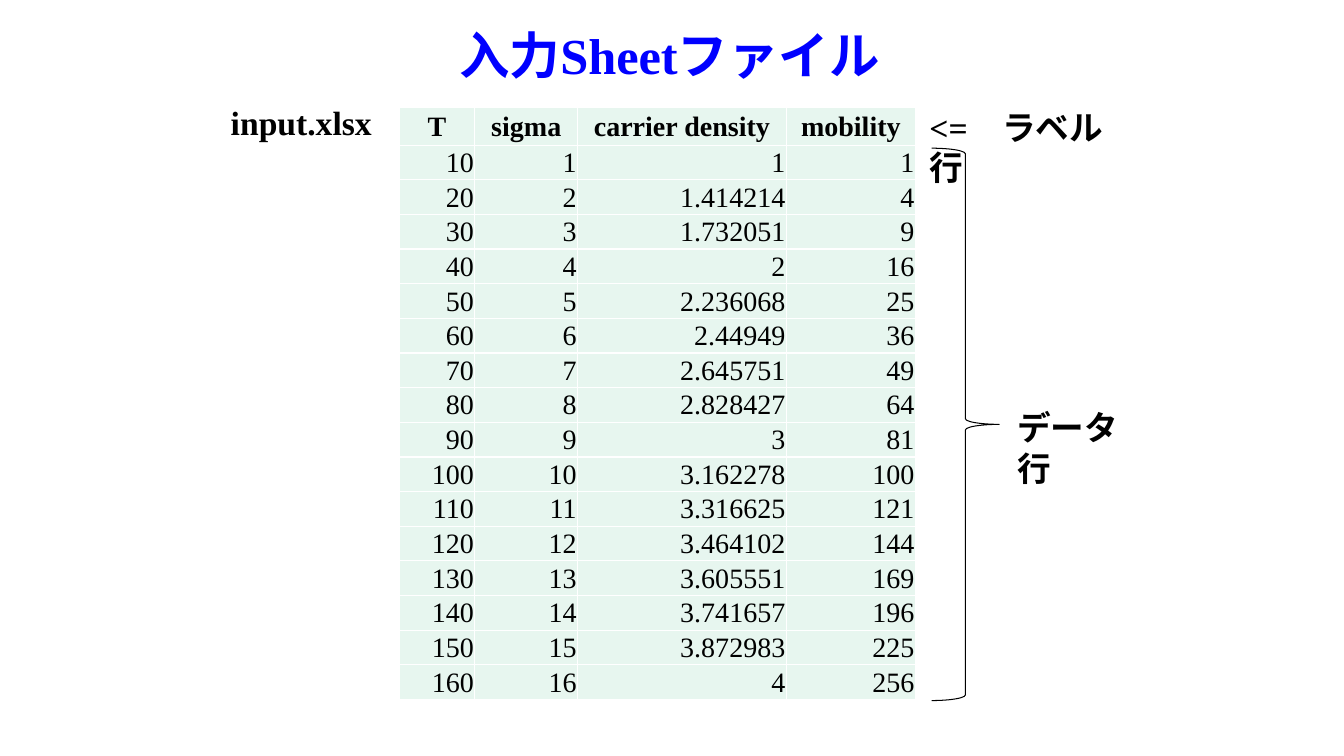
from math import sqrt

from lxml.etree import SubElement
from pptx import Presentation
from pptx.dml.color import RGBColor
from pptx.enum.shapes import MSO_SHAPE as Shape
from pptx.enum.text import MSO_ANCHOR as Anchor, PP_ALIGN as Align
from pptx.oxml.ns import qn
from pptx.util import Inches, Pt

COLORS = {"title": "0000FF", "ink": "000000", "cell": "E7F6EF", "border": "FFFFFF"}
FONT = "Times New Roman"
HEADERS = ["T", "sigma", "carrier density", "mobility"]
COLUMN_WIDTHS = [0.75, 1.02, 2.07, 1.28]
HEADER_HEIGHT = 0.37
DATA_ROWS = [[str(10 * n), str(n), f"{sqrt(n):.7g}", str(n * n)] for n in range(1, 17)]


def color(name):
    return RGBColor.from_string(COLORS[name])


def write(frame, text, size, align=Align.LEFT, bold=True, ink="ink"):
    para = frame.paragraphs[0]
    para.alignment = align
    span = para.add_run()
    span.text = text
    span.font.name = FONT
    span.font.size = Pt(size)
    span.font.bold = bold
    span.font.color.rgb = color(ink)
    return para


def add_text(page, box, text, size=24, anchor=Anchor.TOP, **style):
    frame = page.shapes.add_textbox(*map(Inches, box)).text_frame
    frame.word_wrap = True
    frame.vertical_anchor = anchor
    return write(frame, text, size, **style)


def add_tab_stop(para, position):
    stops = SubElement(para._p.get_or_add_pPr(), qn("a:tabLst"))
    SubElement(stops, qn("a:tab"), pos=str(Inches(position)), algn="l")


def add_borders(cell):
    properties = cell._tc.get_or_add_tcPr()
    for side in ("lnL", "lnR", "lnT", "lnB"):
        line = SubElement(properties, qn(f"a:{side}"), w=str(Pt(1)))
        fill = SubElement(line, qn("a:solidFill"))
        SubElement(fill, qn("a:srgbClr"), val=COLORS["border"])


def fill_cell(cell, text, is_header):
    add_borders(cell)
    cell.fill.solid()
    cell.fill.fore_color.rgb = color("cell")
    cell.vertical_anchor = Anchor.MIDDLE
    cell.margin_left = cell.margin_right = cell.margin_top = Inches(0.01)
    cell.margin_bottom = 0
    align = Align.CENTER if is_header else Align.RIGHT
    write(cell.text_frame, text, 20, align, is_header)


def add_data_table(page, box):
    rows = [HEADERS] + DATA_ROWS
    table = page.shapes.add_table(len(rows), len(HEADERS), *map(Inches, box)).table
    table.horz_banding = False
    for column, width in zip(table.columns, COLUMN_WIDTHS):
        column.width = Inches(width)
    data_height = (box[3] - HEADER_HEIGHT) / len(DATA_ROWS)
    for index, values in enumerate(rows):
        table.rows[index].height = Inches(data_height if index else HEADER_HEIGHT)
        for column, text in enumerate(values):
            fill_cell(table.cell(index, column), text, index == 0)


def add_row_notes(page, box):
    left, top, width, height = box
    label = add_text(page, (left, top, 2.11, 0.5), "<=\tラベル行")
    add_tab_stop(label, 0.72)
    brace_box = (left + 0.12, top + 0.46, 0.67, height - 0.46)
    brace = page.shapes.add_shape(Shape.RIGHT_BRACE, *map(Inches, brace_box))
    brace.shadow.inherit = False
    brace.fill.background()
    brace.line.color.rgb = color("ink")
    brace.line.width = Pt(0.75)
    add_text(page, (left + 0.87, top + 2.98, width - 0.87, 0.5), "データ行")


def build_page(page, width):
    add_text(page, (0, 0, width - 0.05, 1.07), "入力Sheetファイル", 36, Anchor.MIDDLE,
             align=Align.CENTER, ink="title")
    add_text(page, (2.19, 0.96, 1.61, 0.5), "input.xlsx")
    add_data_table(page, (3.96, 1.07, 5.12, 5.87))
    add_row_notes(page, (9.12, 1.01, 2.35, 5.94))


def main():
    deck = Presentation()
    deck.slide_width = Inches(13.33)
    deck.slide_height = Inches(7.5)
    build_page(deck.slides.add_slide(deck.slide_layouts[6]), 13.33)
    deck.save("out.pptx")


if __name__ == "__main__":
    main()
